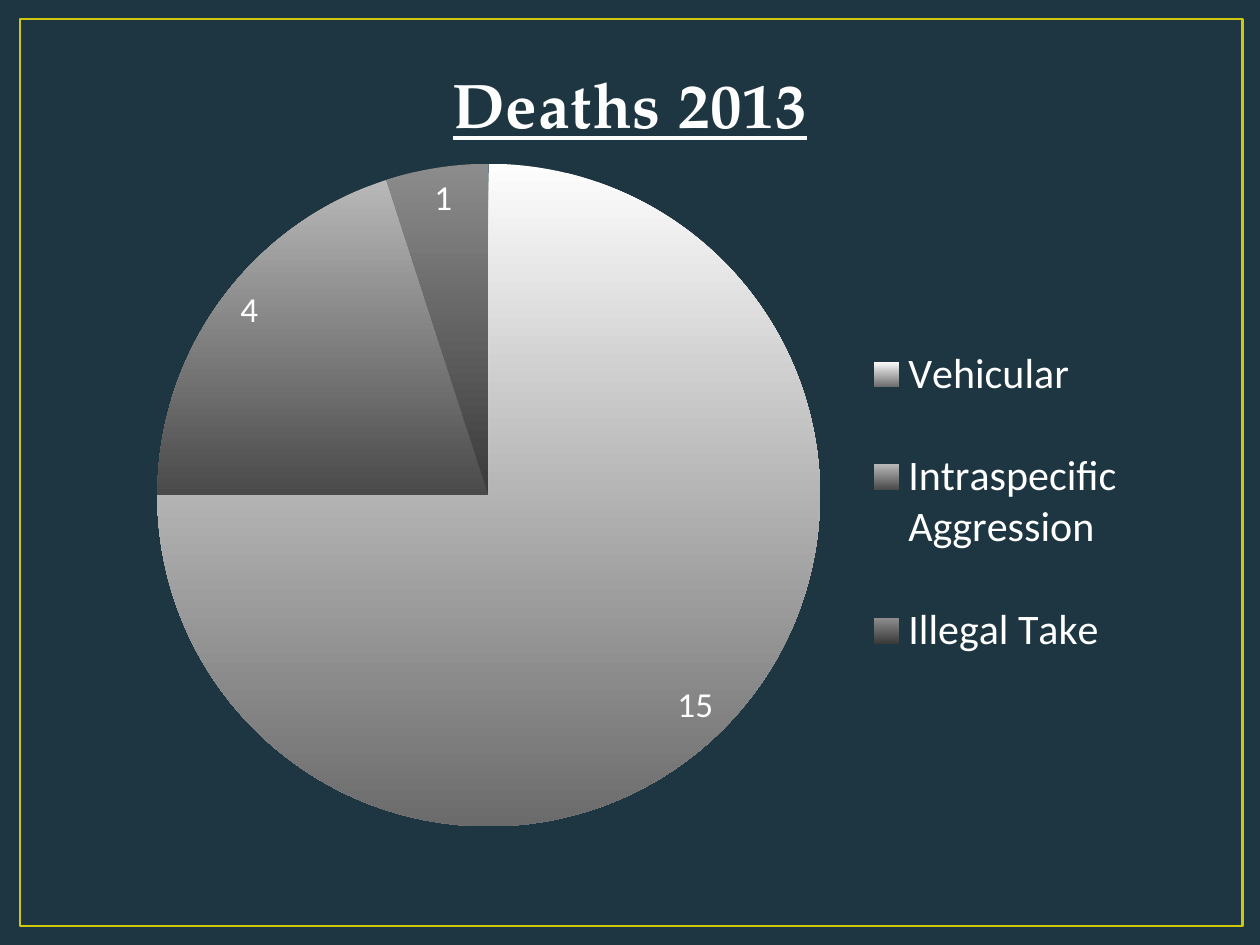
from lxml import etree
from pptx import Presentation
from pptx.chart.data import CategoryChartData
from pptx.dml.color import RGBColor
from pptx.enum import chart as ch, shapes, text
from pptx.oxml.ns import qn
from pptx.util import Inches, Pt

COLORS = {"background": "1D3641", "border": "CFC60D", "title": "FEFEFE", "label": "FFFFFF"}
DEATHS = {"Vehicular": 15, "Intraspecific Aggression": 4, "Illegal Take": 1}
SLICE_SHADES = [("FDFDFD", "6B6B6B"), ("B8B8B8", "4A4A4A"), ("8C8C8C", "3A3A3A")]
CHART_BOX = (0.5, 1.17, 9, 5.53)
PIE_BOX = (1.25, 1.3, 5.26, 5.26)
LEGEND_BOX = (6.64, 2.36, 2.52, 3.26)


def rgb(value):
    return RGBColor.from_string(value)


def set_layout(parent, position, box, frame):
    """Place a chart part at a box in slide inches, inside the chart's frame."""
    for old in parent.findall(qn("c:layout")):
        parent.remove(old)
    layout = etree.Element(qn("c:layout"))
    manual = etree.SubElement(layout, qn("c:manualLayout"))
    if position == 0:
        etree.SubElement(manual, qn("c:layoutTarget"), val="inner")
    for key in ("xMode", "yMode"):
        etree.SubElement(manual, qn(f"c:{key}"), val="edge")
    left, top, width, height = frame
    fractions = {"x": (box[0] - left) / width, "y": (box[1] - top) / height,
                 "w": box[2] / width, "h": box[3] / height}
    for key, value in fractions.items():
        etree.SubElement(manual, qn(f"c:{key}"), val=f"{value:.4f}")
    parent.insert(position, layout)


class SlideBuilder:
    title_font = "TeX Gyre Pagella"
    chart_font = "Calibri"

    def __init__(self, prs):
        self.slide = prs.slides.add_slide(prs.slide_layouts[5])
        fill = self.slide.background.fill
        fill.solid()
        fill.fore_color.rgb = rgb(COLORS["background"])

    def border(self, *box):
        sp = self.slide.shapes.add_shape(
            shapes.MSO_SHAPE.RECTANGLE, *map(Inches, box))
        sp.shadow.inherit = False
        sp.fill.background()
        sp.line.color.rgb = rgb(COLORS["border"])
        sp.line.width = Pt(1.5)
        self.slide.shapes._spTree.insert(2, sp._element)

    def title(self, words, *box):
        sp = self.slide.shapes.title
        sp.left, sp.top, sp.width, sp.height = map(Inches, box)
        tf = sp.text_frame
        tf.word_wrap = True
        tf.vertical_anchor = text.MSO_ANCHOR.BOTTOM
        p = tf.paragraphs[0]
        p.alignment = text.PP_ALIGN.CENTER
        r = p.add_run()
        r.text = words
        r.font.name = self.title_font
        r.font.size = Pt(36)
        r.font.bold = r.font.underline = True
        r.font.color.rgb = rgb(COLORS["title"])
        r._r.get_or_add_rPr().set("spc", "50")

    def style_font(self, font, size):
        font.name = self.chart_font
        font.size = Pt(size)
        font.color.rgb = rgb(COLORS["label"])

    def pie(self, values, shades, frame, pie_box, legend_box):
        data = CategoryChartData()
        data.categories = list(values)
        data.add_series("Series 1", list(values.values()))
        chart = self.slide.shapes.add_chart(
            ch.XL_CHART_TYPE.PIE, *map(Inches, frame), data).chart
        chart.has_title = False
        self.style_font(chart.font, 10)

        plot = chart.plots[0]
        plot.vary_by_categories = True
        for i, ends in enumerate(shades):
            fill = plot.series[0].points[i].format.fill
            fill.gradient()
            fill.gradient_angle = 270
            for stop, shade in zip(fill.gradient_stops, ends):
                stop.color.rgb = rgb(shade)

        labels = plot.series[0].data_labels
        labels.show_value = True
        labels.show_percentage = False
        labels.position = ch.XL_LABEL_POSITION.BEST_FIT
        self.style_font(labels.font, 20)

        chart.has_legend = True
        legend = chart.legend
        legend.position = ch.XL_LEGEND_POSITION.RIGHT
        legend.include_in_layout = False
        self.style_font(legend.font, 24)
        set_layout(chart._chartSpace.chart.plotArea, 0, pie_box, frame)
        set_layout(legend._element, 1, legend_box, frame)


def main():
    prs = Presentation()
    prs.slide_width, prs.slide_height = Inches(10), Inches(7.5)
    s = SlideBuilder(prs)
    s.border(0.16, 0.15, 9.7, 7.2)
    s.title("Deaths 2013", 0.5, 0.3, 9, 0.87)
    s.pie(DEATHS, SLICE_SHADES, CHART_BOX, PIE_BOX, LEGEND_BOX)
    prs.save("out.pptx")


if __name__ == "__main__":
    main()
